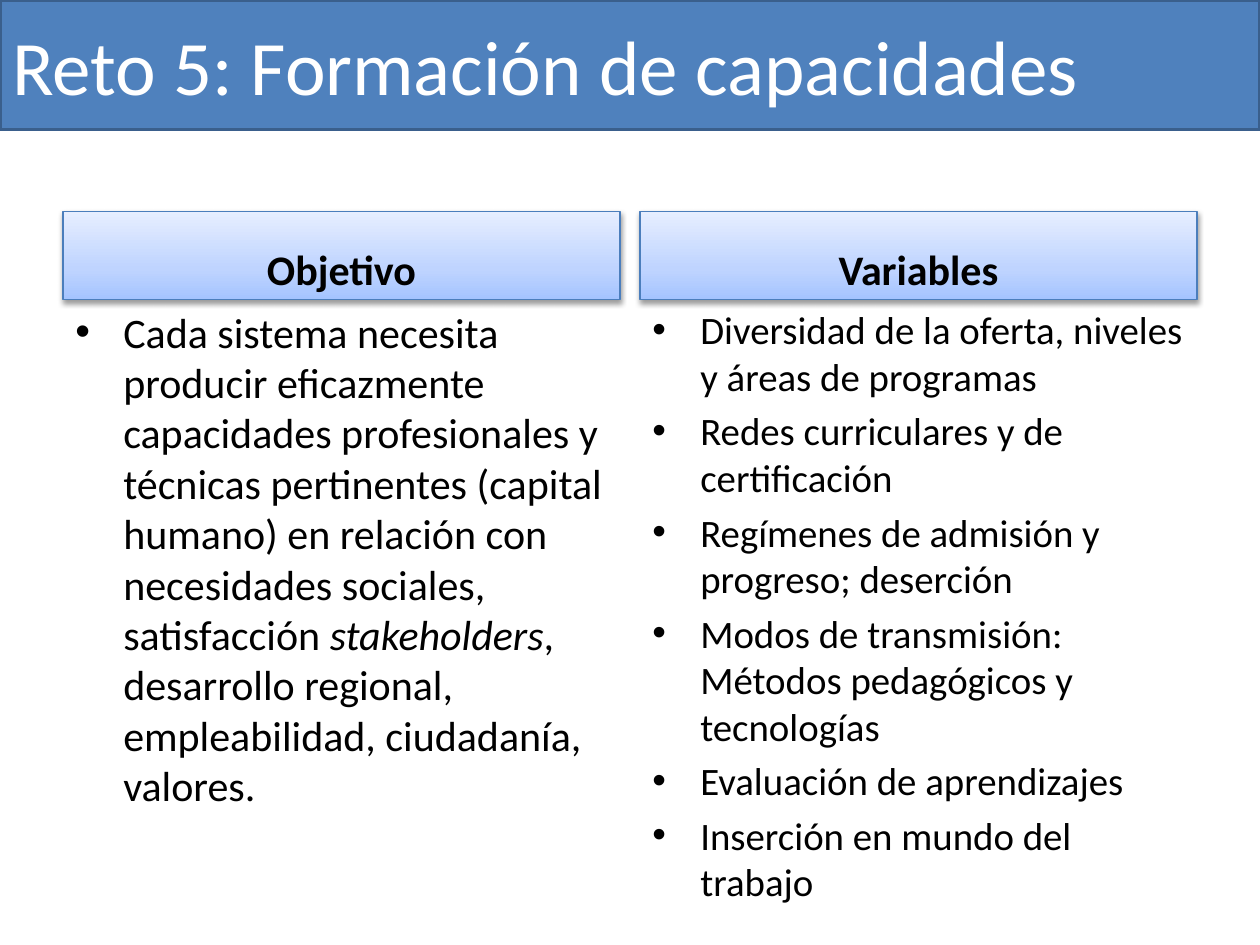
"""Build a slide with a title band and two headed columns of text."""
import copy
import dataclasses

import lxml.etree
import pptx
import pptx.dml.color
import pptx.enum.shapes
import pptx.enum.text
import pptx.oxml
import pptx.oxml.ns
import pptx.util

Inches, Pt = pptx.util.Inches, pptx.util.Pt
RGB = pptx.dml.color.RGBColor.from_string
ALIGN = pptx.enum.text.PP_ALIGN
ANCHOR = pptx.enum.text.MSO_ANCHOR
qn = pptx.oxml.ns.qn

SHADOW = (
    f'<a:effectLst {pptx.oxml.ns.nsdecls("a")}>'
    '<a:outerShdw blurRad="40000" dist="20000" dir="5400000" rotWithShape="0">'
    '<a:srgbClr val="000000"><a:alpha val="38000"/></a:srgbClr>'
    '</a:outerShdw></a:effectLst>'
)


@dataclasses.dataclass(frozen=True)
class Theme:
    """Colours, font and type sizes."""
    font: str = "Calibri"
    band: str = "4F81BD"
    band_line: str = "3A5F8C"
    head_line: str = "4B7EBC"
    gradient: tuple = ((0, "A4C4FF"), (0.35, "BFD4FF"), (1, "E6EEFF"))
    light: str = "FFFFFF"
    dark: str = "000000"
    title: float = 44
    body: float = 24
    small: float = 22.2


class Deck:
    """Hold the theme and the current slide."""

    def __init__(self, slide, theme):
        """Keep the slide and the theme."""
        self.slide, self.theme = slide, theme

    def frame(self, sp, anchor):
        """Prepare and return the text frame of a shape."""
        tf = sp.text_frame
        fmt = {"word_wrap": True, "vertical_anchor": anchor}
        for name, value in fmt.items():
            setattr(tf, name, value)
        return tf

    def run(self, p, text, size, color, **fmt):
        """Add a run of text with its font format."""
        r = p.add_run()
        r.text = text
        fmt = {"name": self.theme.font, "size": Pt(size), **fmt}
        for name, value in fmt.items():
            setattr(r.font, name, value)
        r.font.color.rgb = RGB(color)

    def box(self, x, y, w, h, line, weight):
        """Add an outlined rectangle without a shadow."""
        sp = self.slide.shapes.add_shape(
            pptx.enum.shapes.MSO_SHAPE.RECTANGLE,
            Inches(x), Inches(y), Inches(w), Inches(h))
        sp.shadow.inherit = False
        sp.line.color.rgb = RGB(line)
        sp.line.width = Pt(weight)
        return sp

    def title(self, text, w, h):
        """Add the title band."""
        t = self.theme
        sp = self.box(0, 0, w, h, t.band_line, 2)
        sp.fill.solid()
        sp.fill.fore_color.rgb = RGB(t.band)
        p = self.frame(sp, ANCHOR.MIDDLE).paragraphs[0]
        p.alignment = ALIGN.LEFT
        self.run(p, text, t.title, t.light)

    def heading(self, text, x, y, w, h):
        """Add a column heading with a gradient and a soft shadow."""
        t = self.theme
        sp = self.box(x, y, w, h, t.head_line, 0.75)
        sp.fill.gradient()
        sp.fill.gradient_angle = 90
        props = sp._element.spPr
        stops = props.find(".//" + qn("a:gsLst"))
        stops.insert(1, copy.deepcopy(stops[0]))
        for stop, (position, color) in zip(sp.fill.gradient_stops, t.gradient):
            stop.position = position
            stop.color.rgb = RGB(color)
        props.replace(props.find(qn("a:effectLst")), pptx.oxml.parse_xml(SHADOW))
        p = self.frame(sp, ANCHOR.BOTTOM).paragraphs[0]
        p.alignment = ALIGN.CENTER
        p.space_before = Pt(t.body * 0.2)
        self.run(p, text, t.body, t.dark, bold=True)

    def bullets(self, items, size, x, y, w, h):
        """Add a bulleted list whose items are lists of (text, italic)."""
        sp = self.slide.shapes.add_textbox(
            Inches(x), Inches(y), Inches(w), Inches(h))
        tf = self.frame(sp, ANCHOR.TOP)
        for i, runs in enumerate(items):
            p = tf.add_paragraph() if i else tf.paragraphs[0]
            p.space_before = Pt(size * 0.2)
            pr = p._p.get_or_add_pPr()
            pr.set("marL", str(Inches(0.38)))
            pr.set("indent", str(-Inches(0.38)))
            lxml.etree.SubElement(pr, qn("a:buFont"), typeface="Arial")
            lxml.etree.SubElement(pr, qn("a:buChar"), char="•")
            for text, italic in runs:
                self.run(p, text, size, self.theme.dark, italic=italic)


def main():
    """Build and save the slide."""
    prs = pptx.Presentation()
    prs.slide_width, prs.slide_height = Inches(10), Inches(7.5)
    theme = Theme()
    deck = Deck(prs.slides.add_slide(prs.slide_layouts[6]), theme)
    goal = [[
        ("Cada sistema necesita producir eficazmente capacidades profesionales "
         "y técnicas pertinentes (capital humano) en relación con necesidades "
         "sociales, satisfacción ", False),
        ("stakeholders", True),
        (", desarrollo regional, empleabilidad, ciudadanía, valores.", False),
    ]]
    variables = [[(text, False)] for text in (
        "Diversidad de la oferta, niveles y áreas de programas",
        "Redes curriculares y de certificación",
        "Regímenes de admisión y progreso; deserción",
        "Modos de transmisión: Métodos pedagógicos y tecnologías",
        "Evaluación de aprendizajes",
        "Inserción en mundo del trabajo",
    )]
    columns = (("Objetivo", goal, theme.body),
               ("Variables", variables, theme.small))

    deck.title("Reto 5: Formación de capacidades", 10, 1.03)
    margin, gap, top, head, body = 0.5, 0.16, 1.68, 0.7, 4.32
    width = (10 - 2 * margin - gap) / 2
    for i, (name, items, size) in enumerate(columns):
        x = margin + i * (width + gap)
        deck.heading(name, x, top, width, head)
        deck.bullets(items, size, x, top + head, width, body)
    prs.save("out.pptx")


if __name__ == "__main__":
    main()
